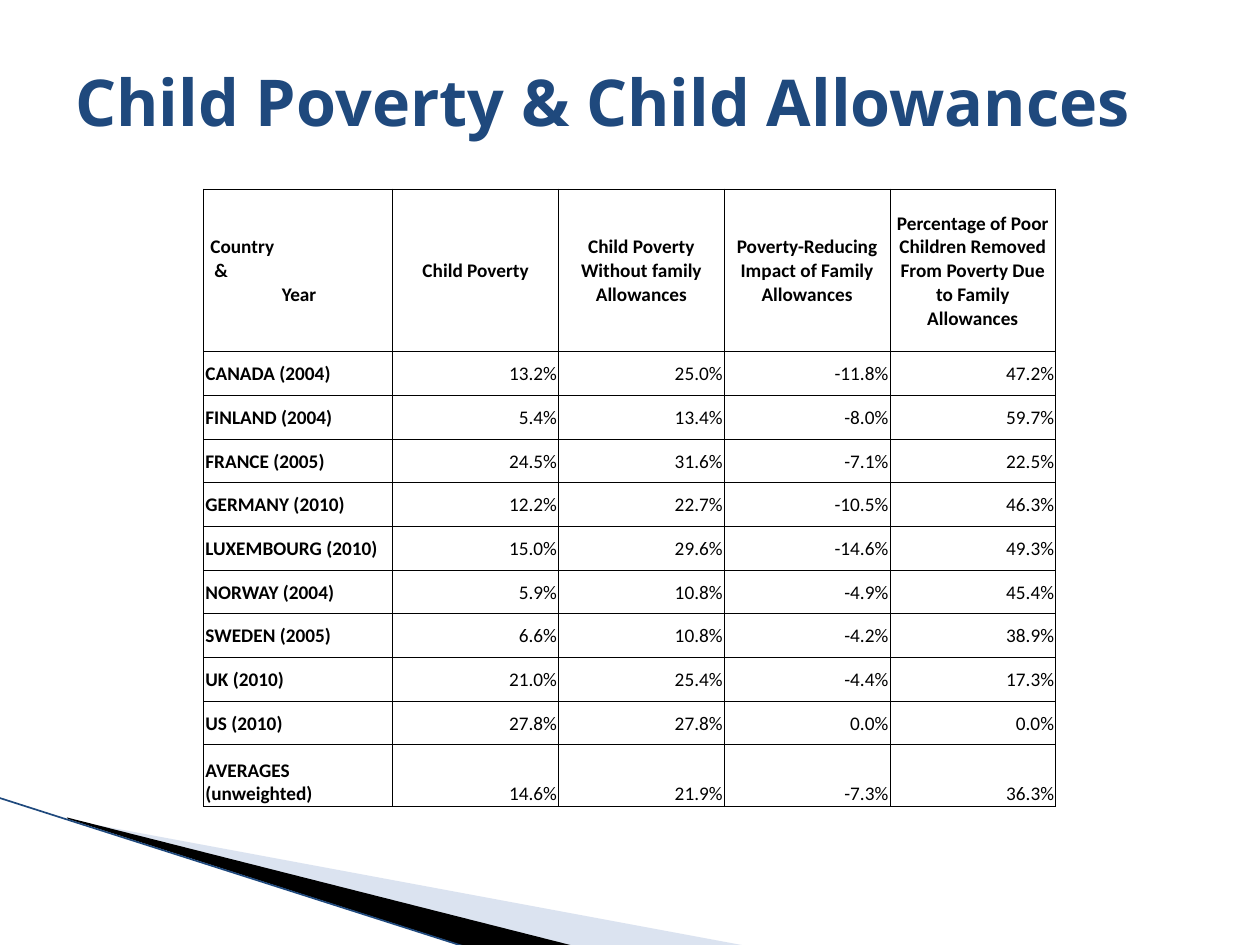
from dataclasses import dataclass

from lxml import etree
from pptx import Presentation
from pptx.dml.color import RGBColor
from pptx.enum import shapes as kinds, text as tx
from pptx.oxml import ns
from pptx.util import Cm, Pt


@dataclass(frozen=True)
class Theme:
    navy: str = "1F497D"
    pale: str = "A7B9DB"
    black: str = "000000"
    head: str = "Open Sans"
    body: str = "Calibri"
    title: float = 36.9
    cell: float = 11
    rule: float = 0.5
    edge: float = 0.95


@dataclass(frozen=True)
class Wedge:
    points: tuple
    color: str
    alpha: int = 100


@dataclass(frozen=True)
class Line:
    text: str
    indent: float = 0


@dataclass(frozen=True)
class Entry:
    label: str
    rates: tuple


LOOK = Theme()

WEDGES = (
    Wedge(((1.4, 16.53), (15.11, 19.08), (11.58, 19.08), (1.4, 16.51)), LOOK.pale, 40),
    Wedge(((1.35, 16.48), (11.61, 19.08), (9.45, 19.1), (1.37, 16.51)), LOOK.black),
)

CORNER = (Line("Country", 0.1), Line("&", 0.18), Line("Year", 1.54))
HEADS = (
    "Child Poverty",
    "Child Poverty Without family Allowances",
    "Poverty-Reducing Impact of Family Allowances",
    "Percentage of Poor Children Removed From Poverty Due to Family Allowances",
)
ROWS = (
    Entry("CANADA (2004)", (13.2, 25.0, -11.8, 47.2)),
    Entry("FINLAND (2004)", (5.4, 13.4, -8.0, 59.7)),
    Entry("FRANCE (2005)", (24.5, 31.6, -7.1, 22.5)),
    Entry("GERMANY (2010)", (12.2, 22.7, -10.5, 46.3)),
    Entry("LUXEMBOURG (2010)", (15.0, 29.6, -14.6, 49.3)),
    Entry("NORWAY (2004)", (5.9, 10.8, -4.9, 45.4)),
    Entry("SWEDEN (2005)", (6.6, 10.8, -4.2, 38.9)),
    Entry("UK (2010)", (21.0, 25.4, -4.4, 17.3)),
    Entry("US (2010)", (27.8, 27.8, 0.0, 0.0)),
    Entry("AVERAGES (unweighted)", (14.6, 21.9, -7.3, 36.3)),
)

LEFT, MID, RIGHT = tx.PP_ALIGN.LEFT, tx.PP_ALIGN.CENTER, tx.PP_ALIGN.RIGHT
WIDTHS = [3.81] + [3.34] * len(HEADS)
HEIGHTS = [3.28] + [0.88] * (len(ROWS) - 1) + [1.24]


def style(font, name: str, size: float, color: str, bold: bool) -> None:
    font.name, font.size, font.bold = name, Pt(size), bold
    font.color.rgb = RGBColor.from_string(color)


def add_wedge(slide, wedge: Wedge) -> None:
    first, *rest = [(Cm(x), Cm(y)) for x, y in wedge.points]
    pen = slide.shapes.build_freeform(*first)
    pen.add_line_segments(rest, close=True)
    shape = pen.convert_to_shape()
    shape.shadow.inherit = False
    shape.line.fill.background()
    shape.fill.solid()
    shape.fill.fore_color.rgb = RGBColor.from_string(wedge.color)
    if wedge.alpha < 100:
        tint = shape.fill._xPr.find(".//" + ns.qn("a:srgbClr"))
        etree.SubElement(tint, ns.qn("a:alpha")).set("val", str(wedge.alpha * 1000))


def add_edge(slide) -> None:
    line = slide.shapes.add_connector(
        kinds.MSO_CONNECTOR.STRAIGHT, Cm(-0.03), Cm(16.08), Cm(9.42), Cm(19.1))
    line.line.color.rgb = RGBColor.from_string(LOOK.navy)
    line.line.width = Pt(LOOK.edge)
    etree.SubElement(line._element.spPr, ns.qn("a:effectLst"))


def add_title(slide, words: str) -> None:
    frame = slide.shapes.add_textbox(Cm(1.27), Cm(0.43), Cm(22.86), Cm(3.18)).text_frame
    frame.word_wrap = True
    frame.vertical_anchor = tx.MSO_ANCHOR.MIDDLE
    para = frame.paragraphs[0]
    para.text = words
    style(para.font, LOOK.head, LOOK.title, LOOK.navy, True)


def add_rules(cell) -> None:
    """Draw all four borders of a cell."""
    props = cell._tc.get_or_add_tcPr()
    for side in ("lnL", "lnR", "lnT", "lnB"):
        rule = etree.SubElement(props, ns.qn("a:" + side), w=str(Pt(LOOK.rule)))
        fill = etree.SubElement(rule, ns.qn("a:solidFill"))
        etree.SubElement(fill, ns.qn("a:srgbClr"), val=LOOK.black)


def fill_cell(cell, lines: tuple, align, bold: bool, anchor) -> None:
    add_rules(cell)
    cell.fill.background()
    cell.margin_left = cell.margin_right = cell.margin_top = Cm(0.03)
    cell.margin_bottom = 0
    cell.vertical_anchor = anchor
    frame = cell.text_frame
    for i, line in enumerate(lines):
        para = frame.add_paragraph() if i else frame.paragraphs[0]
        para.text = line.text
        para.alignment = align
        if line.indent:
            para._p.get_or_add_pPr().set("marL", str(Cm(line.indent)))
        style(para.font, LOOK.body, LOOK.cell, LOOK.black, bold)


def add_rates(slide) -> None:
    frame = slide.shapes.add_table(
        len(HEIGHTS), len(WIDTHS), Cm(4.11), Cm(3.81), Cm(sum(WIDTHS)), Cm(sum(HEIGHTS)))
    table = frame.table
    table.first_row = table.horz_banding = False
    for col, width in zip(table.columns, WIDTHS):
        col.width = Cm(width)
    for row, height in zip(table.rows, HEIGHTS):
        row.height = Cm(height)

    center, low = tx.MSO_ANCHOR.MIDDLE, tx.MSO_ANCHOR.BOTTOM
    fill_cell(table.cell(0, 0), CORNER, LEFT, True, center)
    for c, head in enumerate(HEADS, 1):
        fill_cell(table.cell(0, c), (Line(head),), MID, True, center)
    for r, entry in enumerate(ROWS, 1):
        anchor = low if r == len(ROWS) else center
        fill_cell(table.cell(r, 0), (Line(entry.label),), LEFT, True, anchor)
        for c, rate in enumerate(entry.rates, 1):
            fill_cell(table.cell(r, c), (Line(f"{rate:.1f}%"),), RIGHT, False, anchor)


def main() -> None:
    deck = Presentation()
    deck.slide_width, deck.slide_height = Cm(25.4), Cm(19.05)
    slide = deck.slides.add_slide(deck.slide_layouts[6])
    for wedge in WEDGES:
        add_wedge(slide, wedge)
    add_edge(slide)
    add_rates(slide)
    add_title(slide, "Child Poverty & Child Allowances")
    deck.save("out.pptx")


if __name__ == "__main__":
    main()
